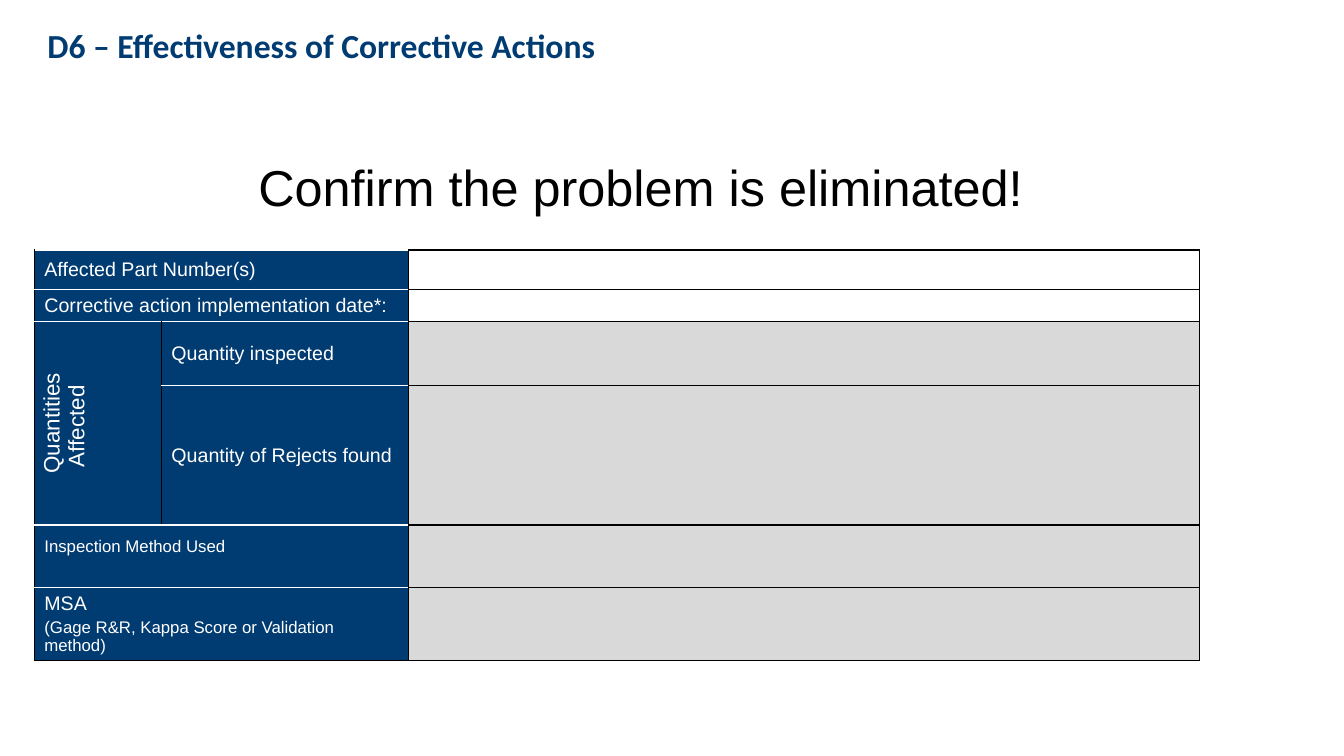
from dataclasses import dataclass

from lxml import etree
from pptx import Presentation, util as u
from pptx.dml.color import RGBColor
from pptx.enum import text
from pptx.oxml.ns import qn

TITLE = "D6 – Effectiveness of Corrective Actions"
STATEMENT = "Confirm the problem is eliminated!"
TITLE_BOX = (0.37, 0.2, 11.24, 0.78)
STATEMENT_BOX = (1.69, 1.5, 9.33, 0.7)
TABLE_ORIGIN = (0.34, 2.48)
COLUMNS = (1.26, 2.45, 7.85)
ROWS = (0.39, 0.29, 0.64, 0.69, 0.62, 0.56)
VALUE_COLUMN = 2
FIRST_SHADED_ROW = 2

LABELS = {
    (0, 0): [("Affected Part Number(s)", "label")],
    (1, 0): [("Corrective action implementation date*:", "label")],
    (2, 0): [("Quantities Affected ", "group")],
    (2, 1): [("Quantity inspected", "label")],
    (3, 1): [("Quantity of Rejects found", "label")],
    (4, 0): [("Inspection Method Used", "detail")],
    (5, 0): [
        ("MSA", "label"),
        ("(Gage R&R, Kappa Score or Validation method)", "detail"),
    ],
}
GROUP = (2, 0)
DATE = (1, 0)
METHOD = (4, 0)
MERGES = [((row, 0), (row, 1)) for row in (0, 1, 4, 5)] + [((2, 0), (3, 0))]


@dataclass(frozen=True)
class Theme:
    navy: str = "003B71"
    grey: str = "D9D9D9"
    white: str = "FFFFFF"
    black: str = "000000"
    heading_font: str = "Calibri"
    body_font: str = "Arial"
    title: int = 24
    statement: int = 36
    group: int = 16
    label: int = 14
    detail: int = 12
    border: int = 1


THEME = Theme()


def inches(lengths):
    return [u.Inches(length) for length in lengths]


def add_run(paragraph, words, size, color, font=THEME.body_font, bold=False):
    run = paragraph.add_run()
    run.text = words
    run.font.name = font
    run.font.size = u.Pt(size)
    run.font.bold = bold
    run.font.color.rgb = RGBColor.from_string(color)


def set_borders(cell, colors):
    properties = cell._tc.get_or_add_tcPr()
    for side, color in zip("LRTB", colors):
        line = etree.SubElement(
            properties, qn(f"a:ln{side}"), w=str(u.Pt(THEME.border))
        )
        fill = etree.SubElement(line, qn("a:solidFill"))
        etree.SubElement(fill, qn("a:srgbClr"), val=color)


def set_fill(cell, color):
    cell.fill.solid()
    cell.fill.fore_color.rgb = RGBColor.from_string(color)


def style_value(cell, row):
    set_borders(cell, [THEME.black] * 4)
    if row >= FIRST_SHADED_ROW:
        set_fill(cell, THEME.grey)
    else:
        cell.fill.background()
    etree.SubElement(
        cell.text_frame.paragraphs[0]._p,
        qn("a:endParaRPr"),
        sz=str(THEME.detail * 100),
    )


def style_label(cell, row):
    bottom = THEME.black if row == len(ROWS) - 1 else THEME.white
    set_borders(cell, (THEME.black, THEME.black, THEME.white, bottom))
    set_fill(cell, THEME.navy)


def write_label(cell, position, lines):
    cell.vertical_anchor = (
        text.MSO_ANCHOR.TOP if position == DATE else text.MSO_ANCHOR.MIDDLE
    )
    for index, (words, role) in enumerate(lines):
        frame = cell.text_frame
        paragraph = frame.add_paragraph() if index else frame.paragraphs[0]
        size = getattr(THEME, role)
        if index:
            paragraph.space_before = u.Pt(size * 0.2)
        if position == GROUP:
            paragraph.alignment = text.PP_ALIGN.CENTER
        add_run(paragraph, words, size, THEME.white)


def add_results_table(slide):
    size = (sum(COLUMNS), sum(ROWS))
    table = slide.shapes.add_table(
        len(ROWS), len(COLUMNS), *inches(TABLE_ORIGIN + size)
    ).table
    table.first_row = table.horz_banding = False
    for column, width in zip(table.columns, inches(COLUMNS)):
        column.width = width
    for row, height in zip(table.rows, inches(ROWS)):
        row.height = height
    for row in range(len(ROWS)):
        for column in range(len(COLUMNS)):
            style = style_value if column == VALUE_COLUMN else style_label
            style(table.cell(row, column), row)
    for start, end in MERGES:
        table.cell(*start).merge(table.cell(*end))
    for position, lines in LABELS.items():
        write_label(table.cell(*position), position, lines)
    table.cell(*GROUP)._tc.get_or_add_tcPr().set("vert", "vert270")
    table.cell(*METHOD).margin_bottom = u.Inches(0.23)


def add_title(slide):
    title = slide.shapes.title
    title.left, title.top, title.width, title.height = inches(TITLE_BOX)
    frame = title.text_frame
    frame.word_wrap = True
    frame.auto_size = text.MSO_AUTO_SIZE.NONE
    frame.vertical_anchor = text.MSO_ANCHOR.TOP
    paragraph = frame.paragraphs[0]
    paragraph.alignment = text.PP_ALIGN.LEFT
    add_run(
        paragraph, TITLE, THEME.title, THEME.navy, THEME.heading_font, bold=True
    )


def add_statement(slide):
    frame = slide.shapes.add_textbox(*inches(STATEMENT_BOX)).text_frame
    frame.word_wrap = True
    frame.auto_size = text.MSO_AUTO_SIZE.SHAPE_TO_FIT_TEXT
    paragraph = frame.paragraphs[0]
    paragraph.alignment = text.PP_ALIGN.CENTER
    add_run(paragraph, STATEMENT, THEME.statement, THEME.black)


def main():
    presentation = Presentation()
    presentation.slide_width = u.Inches(13.33)
    presentation.slide_height = u.Inches(7.5)
    slide = presentation.slides.add_slide(presentation.slide_layouts[5])
    add_results_table(slide)
    add_statement(slide)
    add_title(slide)
    presentation.save("out.pptx")


if __name__ == "__main__":
    main()
